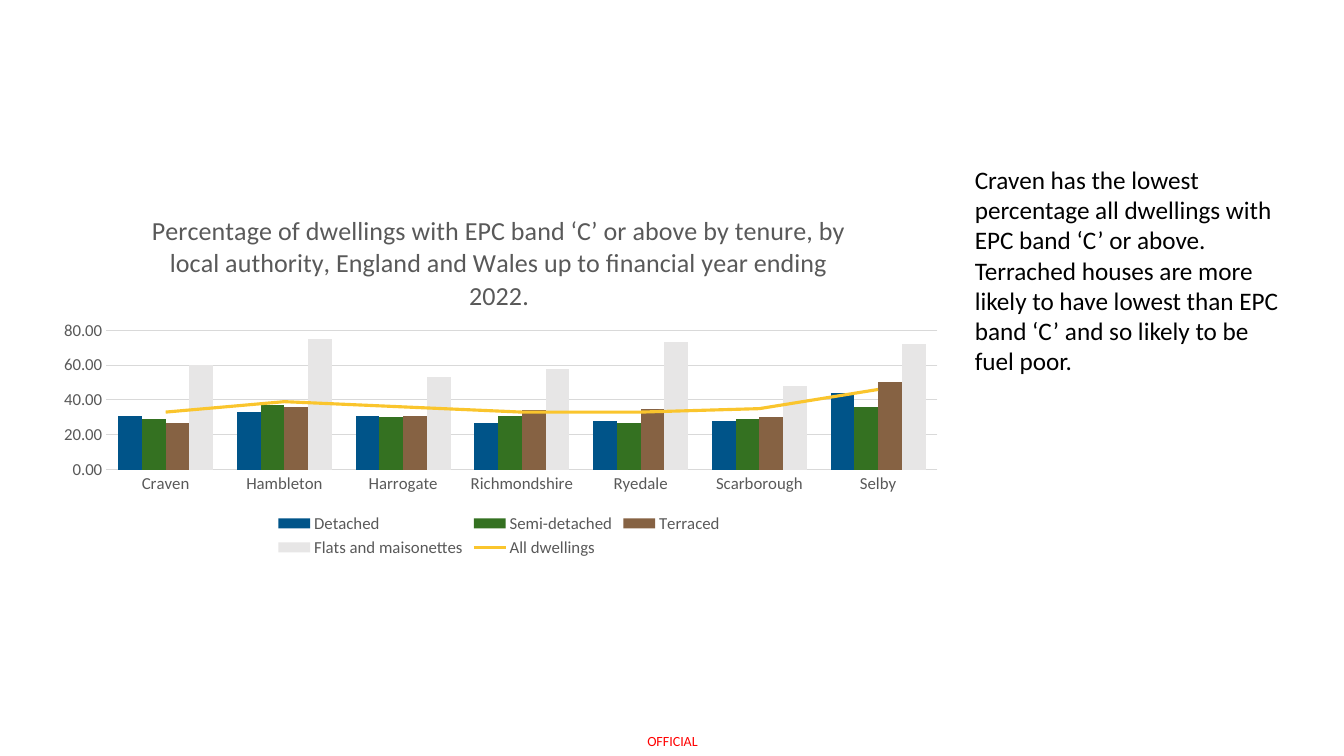
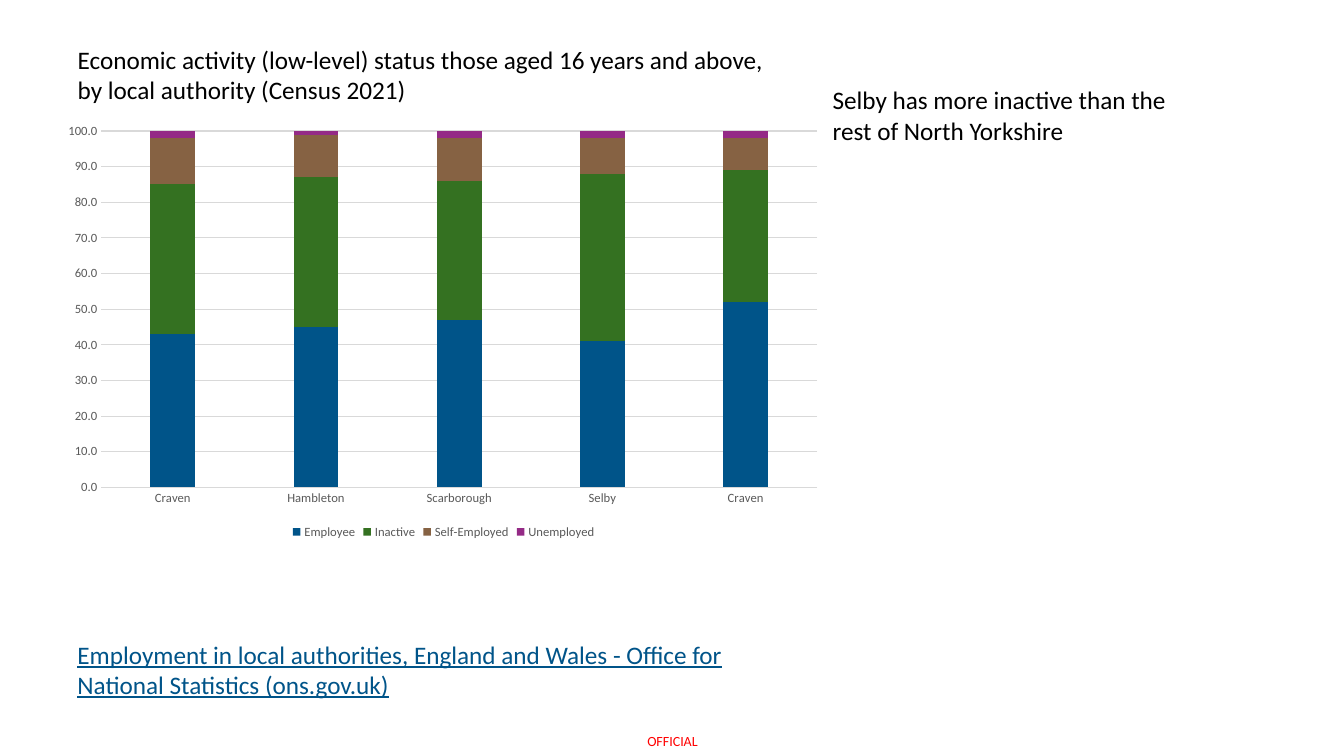
"""Builds two slides on housing and work in North Yorkshire."""
from dataclasses import dataclass

import pptx
import pptx.chart.data
import pptx.dml.color
import pptx.enum.chart
import pptx.enum.text
import pptx.oxml
import pptx.oxml.ns
import pptx.util

Inches = pptx.util.Inches
Pt = pptx.util.Pt
Kind = pptx.enum.chart.XL_CHART_TYPE
Align = pptx.enum.text.PP_ALIGN
Anchor = pptx.enum.text.MSO_ANCHOR
Fit = pptx.enum.text.MSO_AUTO_SIZE


@dataclass(frozen=True)
class Theme:
    """Holds the font, colours and type sizes."""
    font: str = "Calibri"
    ink: str = "000000"
    grey: str = "595959"
    grid: str = "D9D9D9"
    red: str = "FF0000"
    blue: str = "005489"
    green: str = "347121"
    brown: str = "866243"
    pale: str = "E7E6E6"
    gold: str = "FAC52D"
    plum: str = "942A86"
    body: float = 18
    head: float = 18.6
    foot: float = 10
    large: float = 12
    small: float = 9
    hair: float = 0.75
    thick: float = 2.25


THEME = Theme()


def tint(code):
    """Return a colour from its hex code."""
    return pptx.dml.color.RGBColor.from_string(code)


def style(font, size, code):
    """Set the face, size and colour of a font."""
    font.name = THEME.font
    font.size = Pt(size)
    font.color.rgb = tint(code)


def rule(line, code, width):
    """Set the colour and width of a line."""
    line.color.rgb = tint(code)
    line.width = Pt(width)


def write(shape, text, size=THEME.body, code=THEME.ink, align=Align.LEFT):
    """Fill a shape with one styled paragraph and return it."""
    frame = shape.text_frame
    frame.word_wrap = True
    frame.auto_size = Fit.NONE
    frame.vertical_anchor = Anchor.TOP
    frame.text = text
    para = frame.paragraphs[0]
    para.alignment = align
    style(para.font, size, code)
    return para


def add_text(slide, box, text, **look):
    """Add a text box and return its paragraph."""
    shape = slide.shapes.add_textbox(*map(Inches, box))
    return write(shape, text, **look)


def add_title(slide, box, text):
    """Place and fill the title."""
    title = slide.shapes.title
    title.left, title.top, title.width, title.height = map(Inches, box)
    write(title, text)


def add_page(deck, layout):
    """Add a slide with the marking at its foot."""
    slide = deck.slides.add_slide(deck.slide_layouts.get_by_name(layout))
    shape = slide.shapes.add_textbox(*map(Inches, (6.27, 7.21, 0.8, 0.29)))
    write(shape, "OFFICIAL", THEME.foot, THEME.red, Align.CENTER)
    frame = shape.text_frame
    frame.vertical_anchor = Anchor.MIDDLE
    frame.margin_left = frame.margin_right = 0
    frame.margin_top = frame.margin_bottom = 0
    return slide


def clear(node, *tags):
    """Remove the children of a node that have these tags."""
    for tag in tags:
        for old in node.findall(pptx.oxml.ns.qn(tag)):
            node.remove(old)


def set_plot(chart, x, y, w, h):
    """Fix the inner plot area as shares of the chart."""
    area = chart.plots[0]._element.getparent()
    clear(area, "c:layout")
    parts = "".join(f'<c:{key} val="{val}"/>' for key, val in (
        ("layoutTarget", "inner"), ("xMode", "edge"), ("yMode", "edge"),
        ("x", x), ("y", y), ("w", w), ("h", h)))
    area.insert(0, pptx.oxml.parse_xml(
        f'<c:layout {pptx.oxml.ns.nsdecls("c")}>'
        f'<c:manualLayout>{parts}</c:manualLayout></c:layout>'))


def add_chart(slide, box, kind, cats, rows, size, top, step, form, gap, plot):
    """Add a column chart with styled axes and legend."""
    data = pptx.chart.data.CategoryChartData(number_format=form)
    data.categories = cats
    for name, _, vals in rows:
        data.add_series(name, vals)
    chart = slide.shapes.add_chart(kind, *map(Inches, box), data).chart
    style(chart.font, size, THEME.grey)
    chart.has_title = False
    chart.has_legend = True
    chart.legend.position = pptx.enum.chart.XL_LEGEND_POSITION.BOTTOM
    chart.legend.include_in_layout = False
    style(chart.legend.font, size, THEME.grey)
    for axis in (chart.category_axis, chart.value_axis):
        axis.major_tick_mark = pptx.enum.chart.XL_TICK_MARK.NONE
        style(axis.tick_labels.font, size, THEME.grey)
    rule(chart.category_axis.format.line, THEME.grid, THEME.hair)
    scale = chart.value_axis
    scale.minimum_scale, scale.maximum_scale = 0, top
    scale.major_unit = step
    scale.format.line.fill.background()
    rule(scale.major_gridlines.format.line, THEME.grid, THEME.hair)
    scale.tick_labels.number_format = form
    scale.tick_labels.number_format_is_linked = False
    bars = chart.plots[0]
    bars.vary_by_categories = False
    bars.gap_width = gap
    for row, (_, code, _) in zip(bars.series, rows):
        row.format.fill.solid()
        row.format.fill.fore_color.rgb = tint(code)
    set_plot(chart, *plot)
    return chart


def make_line(chart, code):
    """Turn the last column series into a line on the same axes."""
    qn = pptx.oxml.ns.qn
    bars = chart.plots[0]._element
    row = bars.findall(qn("c:ser"))[-1]
    clear(row, "c:invertIfNegative", "c:spPr")
    axes = "".join(f'<c:axId val="{axis.get("val")}"/>'
                   for axis in bars.findall(qn("c:axId")))
    group = pptx.oxml.parse_xml(
        f'<c:lineChart {pptx.oxml.ns.nsdecls("c")}>'
        '<c:grouping val="standard"/><c:varyColors val="0"/>'
        f'<c:marker val="1"/>{axes}</c:lineChart>')
    group.insert(2, row)
    bars.addnext(group)
    line = chart.plots[1].series[0]
    line.smooth = False
    line.marker.style = pptx.enum.chart.XL_MARKER_STYLE.NONE
    rule(line.format.line, code, THEME.thick)


def add_homes(deck):
    """Add the slide on energy bands of dwellings."""
    slide = add_page(deck, "Blank")
    rows = (
        ("Detached", THEME.blue, (31, 33, 31, 27, 28, 28, 44)),
        ("Semi-detached", THEME.green, (29, 37, 30, 31, 27, 29, 36)),
        ("Terraced", THEME.brown, (27, 36, 31, 34, 35, 30, 50)),
        ("Flats and maisonettes", THEME.pale, (60, 75, 53, 58, 73, 48, 72)),
        ("All dwellings", THEME.gold, (33, 39, 36, 33, 33, 35, 46)),
    )
    cats = ("Craven", "Hambleton", "Harrogate", "Richmondshire", "Ryedale",
            "Scarborough", "Selby")
    chart = add_chart(slide, (0.42, 1.93, 9.06, 3.64), Kind.COLUMN_CLUSTERED,
                      cats, rows, THEME.large, 80, 20, "0.00", 100,
                      (0.07, 0.37, 0.91, 0.38))
    chart.plots[0].overlap = 0
    make_line(chart, THEME.gold)
    frame = chart.chart_title.text_frame
    frame.text = ("Percentage of dwellings with EPC band ‘C’ or above by "
                  "tenure, by local authority, England and Wales up to "
                  "financial year ending 2022.")
    font = frame.paragraphs[0].font
    style(font, THEME.head, THEME.grey)
    font.bold = False
    add_text(slide, (9.57, 1.58, 3.34, 2.22),
             "Craven has the lowest percentage all dwellings with EPC band "
             "‘C’ or above. Terrached houses are more likely to have lowest "
             "than EPC band ‘C’ and so likely to be fuel poor.")


def add_work(deck):
    """Add the slide on economic activity."""
    slide = add_page(deck, "Title Only")
    add_title(slide, (0.67, 0.39, 7.16, 0.71),
              "Economic activity (low-level) status those aged 16 years and "
              "above, by local authority (Census 2021)")
    rows = (
        ("Employee", THEME.blue, (43, 45, 47, 41, 52)),
        ("Inactive", THEME.green, (42, 42, 39, 47, 37)),
        ("Self-Employed", THEME.brown, (13, 12, 12, 10, 9)),
        ("Unemployed", THEME.plum, (2, 2, 2, 3, 2)),
    )
    cats = ("Craven", "Hambleton", "Scarborough", "Selby", "Craven")
    chart = add_chart(slide, (0.54, 1.13, 7.72, 4.26), Kind.COLUMN_STACKED,
                      cats, rows, THEME.small, 100, 10, "0.0", 219,
                      (0.06, 0.04, 0.92, 0.83))
    chart.plots[0].overlap = 100
    add_text(slide, (8.16, 0.79, 3.64, 0.71),
             "Selby has more inactive than the rest of North Yorkshire")
    link = add_text(slide, (0.67, 6.29, 6.67, 0.71),
                    "Employment in local authorities, England and Wales - "
                    "Office for National Statistics (ons.gov.uk)",
                    code=THEME.blue)
    link.font.underline = True


def main():
    """Build and save the deck."""
    deck = pptx.Presentation()
    deck.slide_width, deck.slide_height = Inches(13.33), Inches(7.5)
    add_homes(deck)
    add_work(deck)
    deck.save("out.pptx")


if __name__ == "__main__":
    main()
